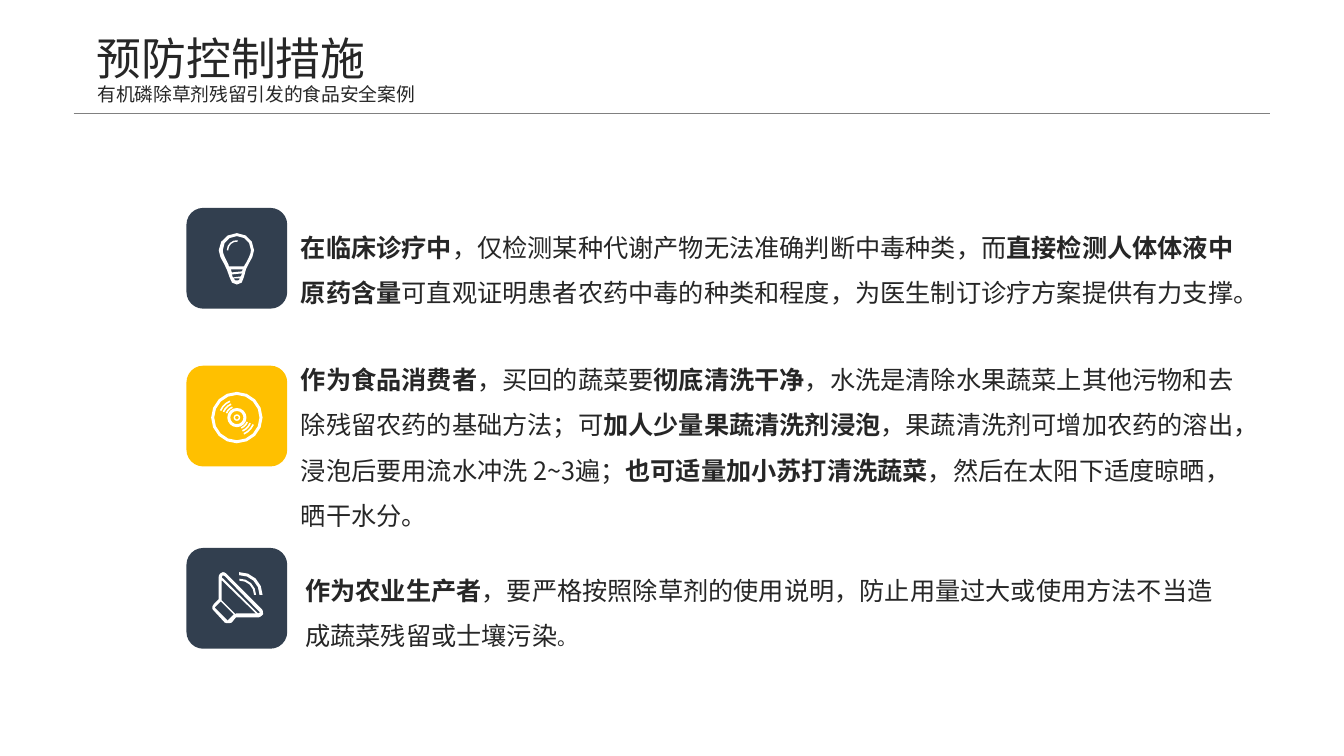
from dataclasses import dataclass
from math import cos, radians, sin

from lxml import etree
from pptx import Presentation
from pptx.dml.color import RGBColor
from pptx.enum.lang import MSO_LANGUAGE_ID
from pptx.enum.shapes import MSO_CONNECTOR, MSO_SHAPE
from pptx.enum.text import MSO_AUTO_SIZE
from pptx.oxml.ns import qn
from pptx.util import Pt

ROUNDED = MSO_SHAPE.ROUNDED_RECTANGLE
STRAIGHT = MSO_CONNECTOR.STRAIGHT
GROW = MSO_AUTO_SIZE.SHAPE_TO_FIT_TEXT
FIXED = MSO_AUTO_SIZE.NONE
CHINESE = MSO_LANGUAGE_ID.SIMPLIFIED_CHINESE

SANS = "Noto Sans CJK SC"
INK, WHITE, NAVY, AMBER, GREY = "262626", "FFFFFF", "323F4F", "FFC000", "808080"
TILE_LEFT, TILE_SIZE = 133.2, 72
PERCENT = TILE_SIZE / 100
CURVE_STEPS = 3
ARC_STEP = 22.5

Contour = list[tuple[float, ...]]


@dataclass(frozen=True)
class Span:
    text: str
    bold: bool = False
    size: float = 18
    font: str = SANS


@dataclass(frozen=True)
class TextBlock:
    left: float
    top: float
    width: float
    height: float
    spacing: float
    spans: list[Span]
    auto_size: MSO_AUTO_SIZE = GROW


@dataclass(frozen=True)
class Measure:
    tile_top: float
    tile_color: str
    icon: list[list[Contour]]
    block: TextBlock


def color(value: str) -> RGBColor:
    return RGBColor.from_string(value)


def arc(x: float, y: float, radius: float, start: float, end: float) -> Contour:
    steps = max(3, round(abs(end - start) / ARC_STEP))
    angles = [radians(start + (end - start) * i / steps) for i in range(steps + 1)]
    return [(x + radius * cos(a), y + radius * sin(a)) for a in angles]


def band(x: float, y: float, inner: float, outer: float, start: float, end: float) -> list[Contour]:
    return [arc(x, y, outer, start, end) + arc(x, y, inner, end, start)]


def ring(x: float, y: float, inner: float, outer: float) -> list[Contour]:
    return [arc(x, y, radius, 0, 360) for radius in (outer, inner)]


def flatten(contour: Contour) -> list[tuple[float, float]]:
    points = [contour[0]]
    for segment in contour[1:]:
        if len(segment) == 2:
            points.append(segment)
            continue
        x0, y0 = points[-1]
        x1, y1, x2, y2, x3, y3 = segment
        for step in range(1, CURVE_STEPS + 1):
            t = step / CURVE_STEPS
            a, b, c, d = (1 - t) ** 3, 3 * t * (1 - t) ** 2, 3 * t * t * (1 - t), t ** 3
            points.append((a * x0 + b * x1 + c * x2 + d * x3, a * y0 + b * y1 + c * y2 + d * y3))
    return points


BULB = [
    [
        [(50, 25), (40, 25, 32, 33, 32, 42), (32, 49, 38, 55, 40, 61), (44, 70, 43, 76, 50, 76),
         (57, 76, 56, 70, 59, 61), (61, 55, 67, 49, 67, 42), (67, 33, 60, 25, 50, 25)],
        [(57, 58), (42, 58), (42, 56, 41, 55, 40, 53), (38, 49, 36, 45, 36, 42),
         (36, 34, 42, 28, 50, 28), (58, 28, 64, 34, 64, 42), (64, 45, 62, 49, 60, 53),
         (59, 55, 58, 56, 57, 58)],
        [(45, 64), (44, 61), (56, 61), (55, 63)],
        [(54, 68), (46, 69), (45, 66), (55, 65)],
        [(50, 72), (48, 72, 48, 72, 47, 70), (53, 70), (52, 72, 52, 72, 50, 72)],
    ],
    band(50, 42, 8.5, 10, 180, 275),
]
DISC = [ring(50, 51.5, inner, outer) for inner, outer in ((22.5, 25.5), (1.8, 3.2), (6.5, 9.5))] + [
    band(50, 51.5, radius - 0.8, radius + 0.8, turn + 23, turn + 67)
    for turn in (0, 180)
    for radius in (11.2, 14.4, 17.6)
]
SPEAKER = [
    band(53, 46.5, 14, 16, -92, 0),
    [
        [(40, 26), (39, 25, 38, 24, 36, 24), (33, 25, 32, 27, 32, 29), (32, 51), (27, 56),
         (25, 58, 25, 61, 27, 62), (38, 74), (40, 75, 42, 75, 45, 74), (49, 69), (71, 69),
         (73, 69, 75, 67, 76, 66), (76, 64, 76, 62, 75, 61)],
        [(73, 64), (71, 65), (35, 29), (36, 27), (38, 28), (72, 63)],
        [(49, 65), (49, 66), (35, 52), (35, 32), (69, 65)],
        [(47, 66), (42, 71), (41, 72), (40, 71), (29, 60), (28, 59), (29, 58), (34, 53)],
    ],
    band(53, 46.5, 19.5, 22.5, -92, 0),
]

MEASURES = [
    Measure(148.5, NAVY, BULB, TextBlock(207.8, 151.4, 695.52, 72.72, 1.5, [
        Span("在临床诊疗中", True),
        Span("，仅检测某种代谢产物无法准确判断中毒种类，而"),
        Span("直接检测人体体液中原药含量", True),
        Span("可直观证明患者农药中毒的种类和程度，为医生制订诊疗方案提供有力支撑。"),
    ])),
    Measure(261.2, AMBER, DISC, TextBlock(207.8, 245.9, 695.52, 138.24, 1.5, [
        Span("作为食品消费者", True),
        Span("，买回的蔬菜要"),
        Span("彻底清洗干净", True),
        Span("，水洗是清除水果蔬菜上其他污物和去除残留农药的基础方法；可"),
        Span("加人少量果蔬清洗剂浸泡", True),
        Span("，果蔬清洗剂可增加农药的溶出，浸泡后要用流水冲洗 2~3遍；"),
        Span("也可适量加小苏打清洗蔬菜", True),
        Span("，然后在太阳下适度晾晒，晒干水分。"),
    ])),
    Measure(391.4, NAVY, SPEAKER, TextBlock(211, 396.4, 679.68, 72.72, 1.5, [
        Span("作为农业生产者", True),
        Span("，要严格按照除草剂的使用说明，防止用量过大或使用方法不当造成蔬菜残留或士壤污染"),
        Span("。", size=14),
    ])),
]
HEADINGS = [
    TextBlock(61.92, 10.8, 432.72, 54, 1.2, [Span("预防控制措施", size=32, font="Arial")]),
    TextBlock(62.64, 52.56, 252, 26.64, 1.2,
              [Span("有机磷除草剂残留引发的食品安全案例", size=13.33)], FIXED),
]


def paint(shape, fill: str) -> None:
    shape.shadow.inherit = False
    shape.fill.solid()
    shape.fill.fore_color.rgb = color(fill)
    shape.line.fill.background()


def add_text(shapes, block: TextBlock) -> None:
    box = shapes.add_textbox(Pt(block.left), Pt(block.top), Pt(block.width), Pt(block.height))
    frame = box.text_frame
    frame.word_wrap = True
    frame.auto_size = block.auto_size
    paragraph = frame.paragraphs[0]
    paragraph.line_spacing = block.spacing
    for span in block.spans:
        run = paragraph.add_run()
        run.text = span.text
        font = run.font
        font.size, font.bold, font.name = Pt(span.size), span.bold, span.font
        font.language_id = CHINESE
        font.color.rgb = color(INK)
        east_asian = etree.Element(qn("a:ea"), typeface=SANS)
        run._r.rPr.find(qn("a:latin")).addnext(east_asian)


def add_icon_part(shapes, contours: list[Contour], top: float) -> None:
    outlines = [[(Pt(x * PERCENT), Pt(y * PERCENT)) for x, y in flatten(c)] for c in contours]
    builder = shapes.build_freeform(*outlines[0][0])
    builder.add_line_segments(outlines[0][1:])
    for outline in outlines[1:]:
        builder.move_to(*outline[0])
        builder.add_line_segments(outline[1:])
    paint(builder.convert_to_shape(Pt(TILE_LEFT), Pt(top)), WHITE)


def add_measure(slide, measure: Measure) -> None:
    shapes = slide.shapes.add_group_shape().shapes
    tile = shapes.add_shape(ROUNDED, Pt(TILE_LEFT), Pt(measure.tile_top), Pt(TILE_SIZE), Pt(TILE_SIZE))
    paint(tile, measure.tile_color)
    for contours in measure.icon:
        add_icon_part(shapes, contours, measure.tile_top)
    add_text(shapes, measure.block)


def add_rule(slide) -> None:
    rule = slide.shapes.add_connector(STRAIGHT, Pt(52.56), Pt(80.64), Pt(907.2), Pt(80.64))
    rule.line.color.rgb = color(GREY)
    rule.line.width = Pt(0.25)
    etree.SubElement(rule._element.spPr, qn("a:effectLst"))


def main() -> None:
    presentation = Presentation()
    presentation.slide_width, presentation.slide_height = Pt(960), Pt(540)
    slide = presentation.slides.add_slide(presentation.slide_layouts[6])
    for measure in MEASURES:
        add_measure(slide, measure)
    for heading in HEADINGS:
        add_text(slide.shapes, heading)
    add_rule(slide)
    presentation.save("out.pptx")


if __name__ == "__main__":
    main()
